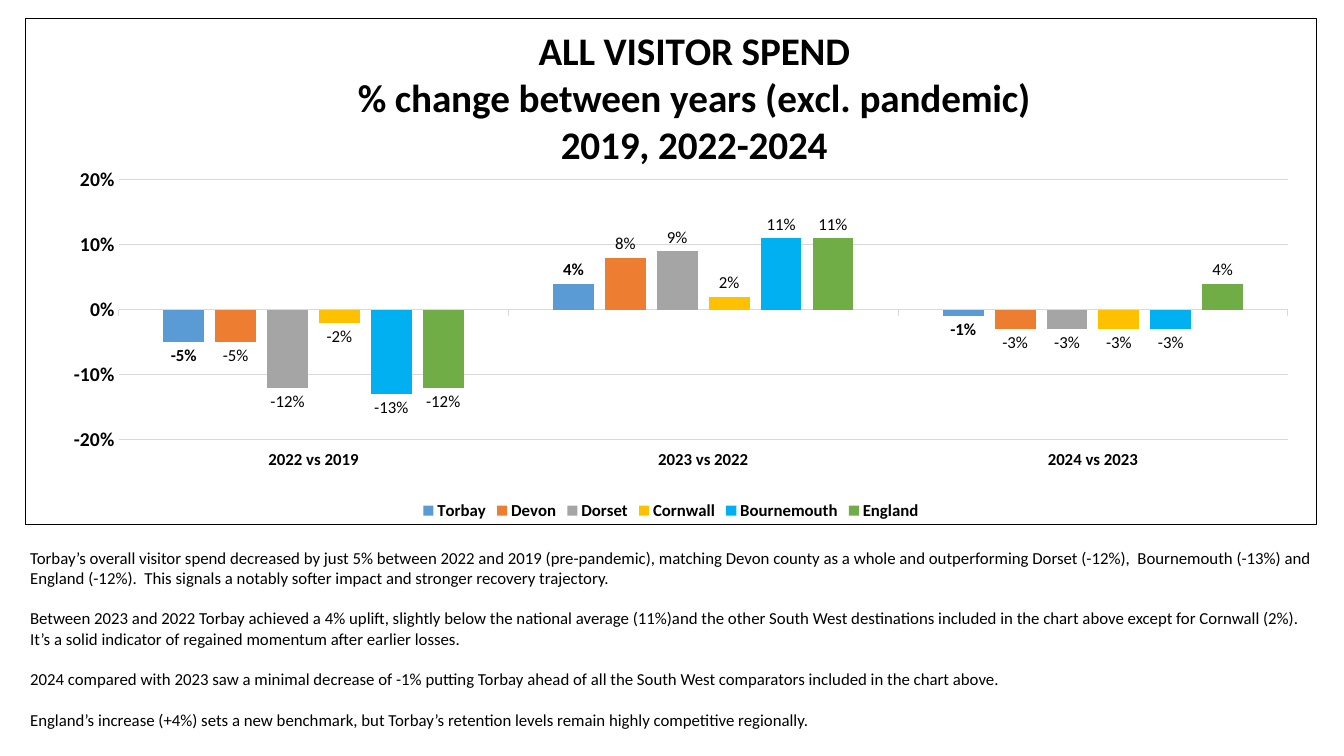
from dataclasses import dataclass

import pptx
import pptx.chart.data
import pptx.dml.color
import pptx.enum.chart
import pptx.enum.text
import pptx.oxml
import pptx.oxml.ns
import pptx.util


@dataclass(frozen=True)
class Theme:
    font: str = "Calibri"
    ink: str = "000000"
    grid: str = "D9D9D9"
    title_size: int = 28
    scale_size: int = 14
    text_size: int = 12
    hairline: float = 0.75
    paragraph_gap: float = 14.65


REGIONS = {
    "Torbay": ("5B9BD5", (-0.05, 0.04, -0.01)),
    "Devon": ("ED7D31", (-0.05, 0.08, -0.03)),
    "Dorset": ("A5A5A5", (-0.12, 0.09, -0.03)),
    "Cornwall": ("FFC000", (-0.02, 0.02, -0.03)),
    "Bournemouth": ("00B0F0", (-0.13, 0.11, -0.03)),
    "England": ("70AD47", (-0.12, 0.11, 0.04)),
}
PERIODS = ("2022 vs 2019", "2023 vs 2022", "2024 vs 2023")
HEADING = (
    "ALL VISITOR SPEND",
    "% change between years (excl. pandemic)",
    "2019, 2022-2024",
)
FINDINGS = (
    "Torbay’s overall visitor spend decreased by just 5% between 2022 and 2019 "
    "(pre-pandemic), matching Devon county as a whole and outperforming Dorset (-12%),  "
    "Bournemouth (-13%) and England (-12%).  This signals a notably softer impact and "
    "stronger recovery trajectory.",
    "Between 2023 and 2022 Torbay achieved a 4% uplift, slightly below the national "
    "average (11%)and the other South West destinations included in the chart above "
    "except for Cornwall (2%).  It’s a solid indicator of regained momentum after "
    "earlier losses.",
    "2024 compared with 2023 saw a minimal decrease of -1% putting Torbay ahead of all "
    "the South West comparators included in the chart above.",
    "England’s increase (+4%) sets a new benchmark, but Torbay’s retention levels remain "
    "highly competitive regionally.",
)


def rgb(color):
    return pptx.dml.color.RGBColor.from_string(color)


def manual_layout(inner=False, **shares):
    target = '<c:layoutTarget val="inner"/>' if inner else ""
    modes = "".join(f'<c:{key}Mode val="edge"/>' for key in ("x", "y"))
    values = "".join(f'<c:{key} val="{share}"/>' for key, share in shares.items())
    return pptx.oxml.parse_xml(
        f'<c:layout {pptx.oxml.ns.nsdecls("c")}><c:manualLayout>'
        f"{target}{modes}{values}</c:manualLayout></c:layout>"
    )


class SlideBuilder:
    def __init__(self, presentation, theme):
        self.theme = theme
        self.size = (presentation.slide_width, presentation.slide_height)
        self.slide = presentation.slides.add_slide(presentation.slide_layouts[6])

    def area(self, left, top, width, height):
        across, down = self.size
        return tuple(
            round(share * side)
            for share, side in zip((left, top, width, height), (across, down) * 2)
        )

    def style_font(self, font, size, bold=False):
        font.name = self.theme.font
        font.size = pptx.util.Pt(size)
        font.bold = bold
        font.color.rgb = rgb(self.theme.ink)

    def style_line(self, line, color):
        line.color.rgb = rgb(color)
        line.width = pptx.util.Pt(self.theme.hairline)

    def column_chart(self, area, heading, periods, regions):
        data = pptx.chart.data.CategoryChartData(number_format="0%")
        data.categories = periods
        for region, (_, changes) in regions.items():
            data.add_series(region, changes)
        chart = self.slide.shapes.add_chart(
            pptx.enum.chart.XL_CHART_TYPE.COLUMN_CLUSTERED, *self.area(*area), data
        ).chart
        self.style_font(chart.font, 10)
        self.chart_title(chart, heading)
        self.chart_axes(chart)
        self.chart_columns(chart, regions)
        self.chart_frame(chart)

        chart.has_legend = True
        chart.legend.position = pptx.enum.chart.XL_LEGEND_POSITION.BOTTOM
        chart.legend.include_in_layout = False
        self.style_font(chart.legend.font, self.theme.text_size, True)

    def chart_title(self, chart, heading):
        chart.has_title = True
        title = chart.chart_title
        title.include_in_layout = False
        title.text_frame.text = "\n".join(heading)
        for paragraph in title.text_frame.paragraphs:
            self.style_font(paragraph.font, self.theme.title_size, True)
        element = title._element
        for layout in element.findall(pptx.oxml.ns.qn("c:layout")):
            element.remove(layout)
        element.find(pptx.oxml.ns.qn("c:tx")).addnext(manual_layout(x=0.255, y=0.01))

    def chart_axes(self, chart):
        marks = pptx.enum.chart.XL_TICK_MARK
        periods = chart.category_axis
        periods.tick_label_position = pptx.enum.chart.XL_TICK_LABEL_POSITION.LOW
        periods.major_tick_mark = marks.OUTSIDE
        self.style_font(periods.tick_labels.font, self.theme.text_size, True)
        self.style_line(periods.format.line, self.theme.grid)

        change = chart.value_axis
        change.minimum_scale, change.maximum_scale = -0.2, 0.2
        change.major_unit = 0.1
        change.major_tick_mark = marks.NONE
        change.format.line.fill.background()
        change.tick_labels.number_format = "0%"
        change.tick_labels.number_format_is_linked = False
        self.style_font(change.tick_labels.font, self.theme.scale_size, True)
        self.style_line(change.major_gridlines.format.line, self.theme.grid)

    def chart_columns(self, chart, regions):
        plot = chart.plots[0]
        plot.vary_by_categories = False
        plot.gap_width, plot.overlap = 219, -27
        for position, series in enumerate(plot.series):
            series.invert_if_negative = False
            series.format.fill.solid()
            series.format.fill.fore_color.rgb = rgb(regions[series.name][0])
            labels = series.data_labels
            labels.show_value = True
            labels.number_format = "0%"
            labels.number_format_is_linked = False
            labels.position = pptx.enum.chart.XL_LABEL_POSITION.OUTSIDE_END
            self.style_font(labels.font, self.theme.text_size, position == 0)

    def chart_frame(self, chart):
        space = chart._chartSpace
        plot_area = space.chart.plotArea
        for layout in plot_area.findall(pptx.oxml.ns.qn("c:layout")):
            plot_area.remove(layout)
        plot_area.insert(0, manual_layout(True, x=0.072, y=0.319, w=0.906, h=0.513))
        border = pptx.oxml.parse_xml(
            f'<c:spPr {pptx.oxml.ns.nsdecls("c", "a")}><a:noFill/>'
            f'<a:ln w="{pptx.util.Pt(self.theme.hairline)}"><a:solidFill>'
            f'<a:srgbClr val="{self.theme.ink}"/></a:solidFill></a:ln></c:spPr>'
        )
        space.chart.addnext(border)

    def commentary(self, area, findings):
        frame = self.slide.shapes.add_textbox(*self.area(*area)).text_frame
        frame.word_wrap = True
        frame.vertical_anchor = pptx.enum.text.MSO_ANCHOR.TOP
        frame.text = "\n".join(findings)
        for paragraph in frame.paragraphs:
            paragraph.space_after = pptx.util.Pt(self.theme.paragraph_gap)
            self.style_font(paragraph.font, self.theme.text_size)


def main():
    presentation = pptx.Presentation()
    presentation.slide_width = pptx.util.Inches(13.33)
    presentation.slide_height = pptx.util.Inches(7.5)
    builder = SlideBuilder(presentation, Theme())
    builder.column_chart((0.25 / 13.33, 0.18 / 7.5, 12.81 / 13.33, 5.03 / 7.5),
                         HEADING, PERIODS, REGIONS)
    builder.commentary((0.2 / 13.33, 5.38 / 7.5, 12.92 / 13.33, 2.12 / 7.5), FINDINGS)
    presentation.save("out.pptx")


if __name__ == "__main__":
    main()
